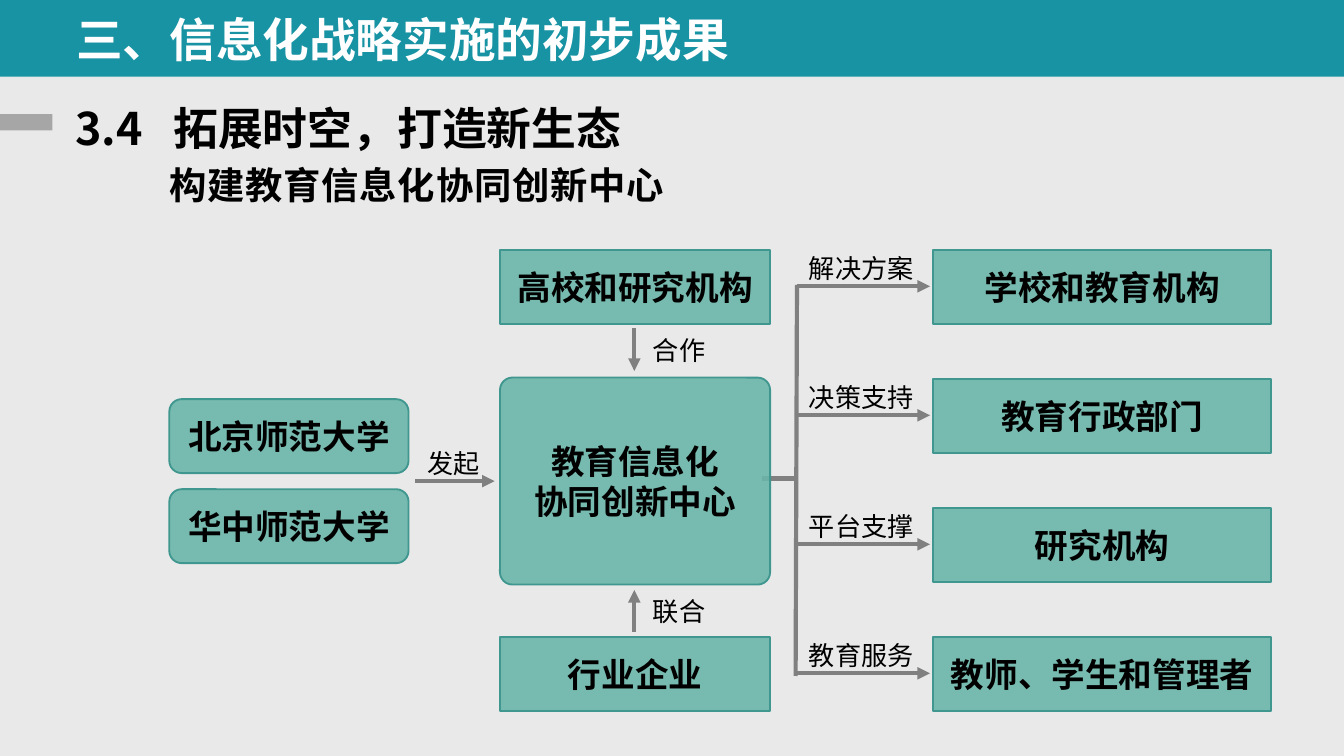
from dataclasses import dataclass

import pptx
import pptx.dml.color
import pptx.enum.shapes
import pptx.enum.text
import pptx.oxml.ns
import pptx.util
from lxml import etree

Inches = pptx.util.Inches
Pt = pptx.util.Pt
Kind = pptx.enum.shapes.MSO_SHAPE
Align = pptx.enum.text.PP_ALIGN
Anchor = pptx.enum.text.MSO_ANCHOR
Fit = pptx.enum.text.MSO_AUTO_SIZE
qn = pptx.oxml.ns.qn

FACE = "Noto Sans CJK SC"
HEX = {"back": "E9E9E9", "bar": "1893A4", "tab": "A6A6A6", "box": "6BB5A9",
       "edge": "3F978F", "line": "808080", "ink": "000000", "white": "FFFFFF"}


@dataclass
class Box:
    text: str
    left: float
    top: float
    width: float
    height: float = 0.55
    kind: int = Kind.RECTANGLE


@dataclass
class Label:
    text: str
    left: float
    top: float
    width: float = 0.59


@dataclass
class Line:
    start: tuple[float, float]
    end: tuple[float, float]
    arrow: bool = True


def rgb(name: str):
    return pptx.dml.color.RGBColor.from_string(HEX[name])


def write(frame, text: str, size: float, bold: bool = False,
          color: str = "ink", align=Align.LEFT, anchor=Anchor.TOP,
          wrap: bool = True, space=None) -> None:
    look = {"word_wrap": wrap, "auto_size": Fit.NONE, "vertical_anchor": anchor}
    for key, value in look.items():
        setattr(frame, key, value)
    style = {"size": Pt(size), "bold": bold, "name": FACE}
    frame.text = text
    for para in frame.paragraphs:
        para.alignment = align
        if space:
            para.line_spacing = space
        for run in para.runs:
            for key, value in style.items():
                setattr(run.font, key, value)
            run.font.color.rgb = rgb(color)
            etree.SubElement(run.font._element, qn("a:ea"), typeface=FACE)


def place(shape, left: float, top: float, width: float, height: float) -> None:
    spot = {"left": left, "top": top, "width": width, "height": height}
    for key, value in spot.items():
        setattr(shape, key, Inches(value))


def draw_text(slide, left: float, top: float, width: float, height: float,
              text: str, size: float, **look):
    box = slide.shapes.add_textbox(
        Inches(left), Inches(top), Inches(width), Inches(height))
    write(box.text_frame, text, size, **look)
    return box


def draw_shape(slide, kind, left: float, top: float, width: float,
               height: float, fill: str):
    shape = slide.shapes.add_shape(
        kind, Inches(left), Inches(top), Inches(width), Inches(height))
    shape.shadow.inherit = False
    shape.fill.solid()
    shape.fill.fore_color.rgb = rgb(fill)
    shape.line.fill.background()
    return shape


def draw_box(slide, box: Box) -> None:
    shape = draw_shape(slide, box.kind, box.left, box.top,
                       box.width, box.height, "box")
    tint = shape._element.spPr.find(qn("a:solidFill"))[0]
    etree.SubElement(tint, qn("a:alpha"), val="90000")
    shape.line.color.rgb = rgb("edge")
    shape.line.width = Pt(1)
    if box.height > 1:
        shape.adjustments[0] = 0.06
    # Long names nearly fill their boxes
    shape.text_frame.margin_left = shape.text_frame.margin_right = Inches(0.05)
    write(shape.text_frame, box.text, 18, bold=True,
          align=Align.CENTER, anchor=Anchor.MIDDLE)


def draw_line(slide, line: Line) -> None:
    ends = [Inches(n) for n in line.start + line.end]
    link = slide.shapes.add_connector(
        pptx.enum.shapes.MSO_CONNECTOR.STRAIGHT, *ends)
    link.line.color.rgb = rgb("line")
    link.line.width = Pt(2.25)
    if line.arrow:
        etree.SubElement(link.line._get_or_add_ln(), qn("a:tailEnd"),
                         type="triangle")
    etree.SubElement(link._element.spPr, qn("a:effectLst"))


def main() -> None:
    # Widescreen page, 16 to 9
    deck = pptx.Presentation()
    deck.slide_width = Inches(10)
    deck.slide_height = Inches(10) * 9 // 16
    slide = deck.slides.add_slide(deck.slide_layouts[5])
    slide.background.fill.solid()
    slide.background.fill.fore_color.rgb = rgb("back")

    # Header bar, title and subtitle
    draw_shape(slide, Kind.RECTANGLE, 0, 0, 10, 0.57, "bar")
    draw_text(slide, 0.47, 0.03, 9, 0.5, "三、信息化战略实施的初步成果", 25,
              bold=True, color="white", space=Pt(30))
    title = slide.shapes.title
    place(title, 0.46, 0.68, 8.69, 0.54)
    write(title.text_frame, "3.4\t拓展时空，打造新生态", 24,
          bold=True, space=Pt(30))
    props = title.text_frame.paragraphs[0]._p.get_or_add_pPr()
    stops = etree.SubElement(props, qn("a:tabLst"))
    etree.SubElement(stops, qn("a:tab"), pos=str(Inches(0.73)), algn="l")
    draw_shape(slide, Kind.RECTANGLE, 0, 0.85, 0.39, 0.12, "tab")
    sub = draw_text(slide, 1.16, 1.16, 3.92, 0.44, "构建教育信息化协同创新中心",
                    20, bold=True, wrap=False)
    sub.text_frame.paragraphs[0].runs[0].font._element.set("spc", "40")

    # Flow into the centre
    lines = [Line((4.72, 2.44), (4.72, 2.76)),
             Line((3.09, 3.58), (3.68, 3.58)),
             Line((4.72, 4.7), (4.72, 4.39)),
             Line((5.93, 2.12), (5.92, 5.03), arrow=False),
             Line((5.67, 3.56), (5.94, 3.56), arrow=False)]
    labels = [Label("发起", 3.08, 3.28), Label("合作", 4.76, 2.44),
              Label("联合", 4.76, 4.38)]
    mid, out, gap = 3.72, 6.94, 0.96
    boxes = [Box("北京师范大学", 1.26, 2.97, 1.78, kind=Kind.ROUNDED_RECTANGLE),
             Box("华中师范大学", 1.26, 3.64, 1.78, kind=Kind.ROUNDED_RECTANGLE),
             Box("高校和研究机构", mid, 1.86, 2.01),
             Box("行业企业", mid, 4.74, 2.01),
             Box("教育信息化\n协同创新中心", mid, 2.81, 2.01, 1.54,
                 Kind.ROUNDED_RECTANGLE)]

    # Services and those they reach
    pairs = [("解决方案", "学校和教育机构"), ("决策支持", "教育行政部门"),
             ("平台支撑", "研究机构"), ("教育服务", "教师、学生和管理者")]
    for row, (service, user) in enumerate(pairs):
        top = 1.86 + row * gap
        lines.append(Line((5.93, top + 0.27), (6.92, top + 0.27)))
        labels.append(Label(service, 5.92, top - 0.03, 1.11))
        boxes.append(Box(user, out, top, 2.52))

    for line in lines:
        draw_line(slide, line)
    for label in labels:
        draw_text(slide, label.left, label.top, label.width, 0.34,
                  label.text, 14, wrap=label.width > 1)
    for box in boxes:
        draw_box(slide, box)

    deck.save("out.pptx")


if __name__ == "__main__":
    main()
